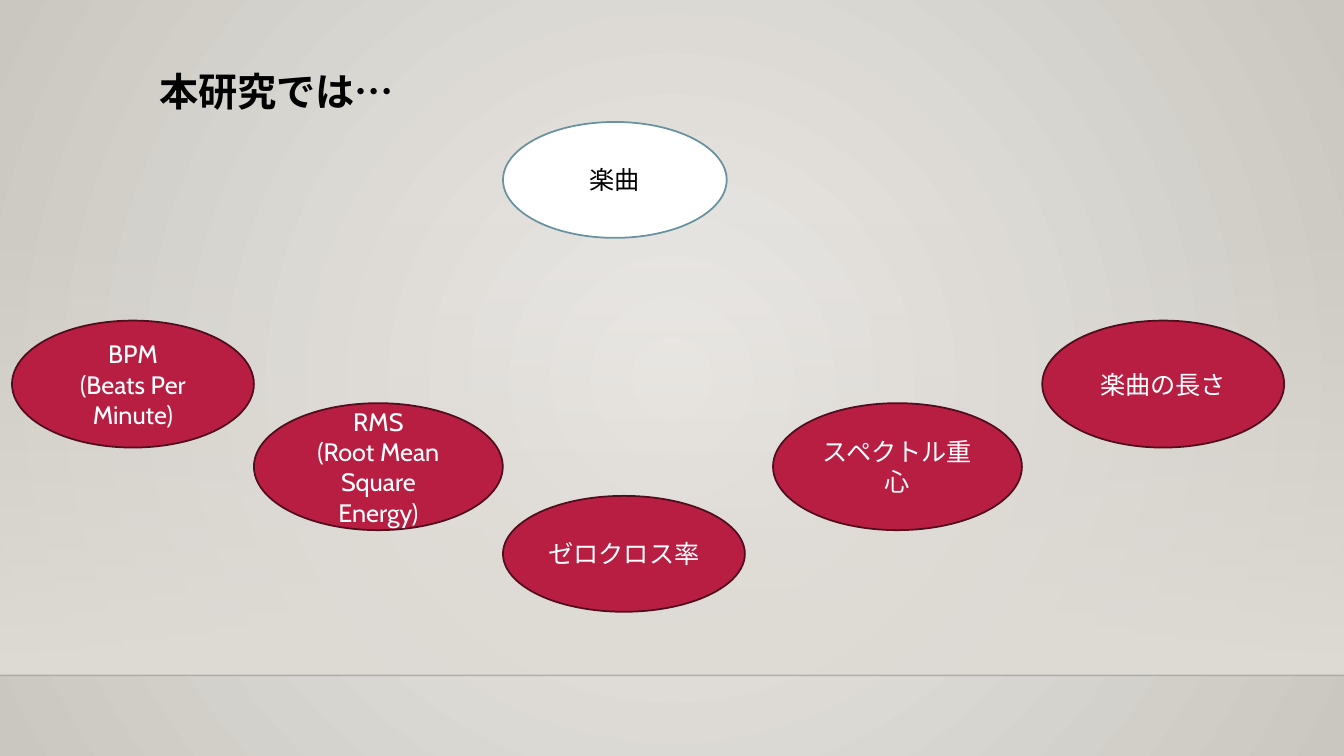
"""Build the slide of song features used in this study."""
from lxml import etree
from pptx import Presentation
from pptx import util as u
from pptx.dml.color import RGBColor
from pptx.enum import lang, shapes, text
from pptx.oxml import ns

Pt = u.Pt
BLACK = RGBColor(0, 0, 0)
WHITE = RGBColor(255, 255, 255)
RED = RGBColor(0xB7, 0x1E, 0x42)
WINE = RGBColor(0x50, 0x0D, 0x1D)
TEAL = RGBColor(0x68, 0x92, 0xA0)
LIGHT = RGBColor(0xEC, 0xEA, 0xE7)
GREY = RGBColor(0xCA, 0xC7, 0xC1)
SAND = RGBColor(0xDF, 0xDB, 0xD5)
WIDE, HIGH = 960, 540
FLOOR = 482.4


def add(node, tag, **vals):
    """Append a drawing element with attributes."""
    return etree.SubElement(node, ns.qn(tag), **vals)


class Deck:
    """Hold the text style and the current slide."""

    def __init__(self):
        """Start a deck with one blank slide."""
        self.prs = Presentation()
        self.prs.slide_width, self.prs.slide_height = Pt(WIDE), Pt(HIGH)
        self.slide = self.prs.slides.add_slide(self.prs.slide_layouts[6])
        self.font = {"name": "Cabin", "size": Pt(18),
                     "language_id": lang.MSO_LANGUAGE_ID.JAPANESE}

    def blend(self, props, stops):
        """Swap a solid fill for a gradient and return it."""
        solid = props.find(ns.qn("a:solidFill"))
        grad = etree.Element(ns.qn("a:gradFill"), rotWithShape="1")
        props.replace(solid, grad)
        marks = add(grad, "a:gsLst")
        for pos, color, alpha in stops:
            mark = add(marks, "a:gs", pos=str(pos * 1000))
            tint = add(mark, "a:srgbClr", val=str(color))
            add(tint, "a:alpha", val=str(alpha * 1000))
        return grad

    def back(self):
        """Fill the background with a round gradient."""
        self.slide.background.fill.solid()
        props = self.slide.element.find(".//" + ns.qn("p:bgPr"))
        grad = self.blend(props, [(0, LIGHT, 100), (100, GREY, 100)])
        ring = add(grad, "a:path", path="circle")
        add(ring, "a:fillToRect", l="50000", t="50000", r="50000", b="50000")

    def shape(self, kind, *box):
        """Add a preset shape without shadow."""
        item = self.slide.shapes.add_shape(kind, *map(Pt, box))
        item.shadow.inherit = False
        item.fill.solid()
        return item

    def wall(self, *box):
        """Add a band that fades in downwards."""
        item = self.shape(shapes.MSO_SHAPE.RECTANGLE, *box)
        item.line.fill.background()
        grad = self.blend(item.element.spPr, [(0, SAND, 0), (100, SAND, 100)])
        add(grad, "a:lin", ang="5400000", scaled="0")

    def edge(self, y):
        """Add a faint line across the slide."""
        item = self.slide.shapes.add_connector(
            shapes.MSO_CONNECTOR.STRAIGHT, Pt(0), Pt(y), Pt(WIDE), Pt(y))
        item.line.width = Pt(1)
        item.line.color.rgb = BLACK
        props = item.element.spPr
        add(props.find(".//" + ns.qn("a:srgbClr")), "a:alpha", val="20000")
        add(props, "a:effectLst")

    def label(self, frame, words, color, align, **more):
        """Set one paragraph for each line of words."""
        for i, line in enumerate(words.split("\n")):
            para = frame.add_paragraph() if i else frame.paragraphs[0]
            para.alignment = align
            run = para.add_run()
            run.text = line
            for key, val in {**self.font, **more}.items():
                setattr(run.font, key, val)
            run.font.color.rgb = color

    def title(self, words, *box):
        """Add the bold heading."""
        frame = self.slide.shapes.add_textbox(*map(Pt, box)).text_frame
        frame.word_wrap = False
        frame.auto_size = text.MSO_AUTO_SIZE.SHAPE_TO_FIT_TEXT
        self.label(frame, words, BLACK, text.PP_ALIGN.LEFT,
                   size=Pt(28), bold=True)

    def oval(self, words, box, fill=RED, rim=WINE, color=WHITE):
        """Add a labelled ellipse."""
        item = self.shape(shapes.MSO_SHAPE.OVAL, *box)
        item.fill.fore_color.rgb = fill
        item.line.color.rgb = rim
        item.line.width = Pt(1.25)
        frame = item.text_frame
        frame.word_wrap = True
        frame.vertical_anchor = text.MSO_ANCHOR.MIDDLE
        self.label(frame, words, color, text.PP_ALIGN.CENTER)


def main():
    """Draw the slide and save it."""
    deck = Deck()
    deck.back()
    deck.wall(0, 159, WIDE, FLOOR - 159)
    deck.edge(FLOOR)
    deck.title("本研究では…", 106.6, 44.6, 184.3, 41)
    deck.oval("楽曲", (359.3, 87.1, 159.8, 82.8), WHITE, TEAL, BLACK)
    for words, *box in (
            ("ゼロクロス率", 359.3, 354.2, 172.8, 82.8),
            ("RMS\n(Root Mean Square Energy)", 181.4, 288, 177.8, 90.7),
            ("スペクトル重心", 552.2, 288, 177.8, 90.7),
            ("楽曲の長さ", 744.5, 229, 172.8, 90.7),
            ("BPM\n(Beats Per Minute)", 8.6, 229, 172.8, 90.7)):
        deck.oval(words, box)
    deck.prs.save("out.pptx")


if __name__ == "__main__":
    main()
